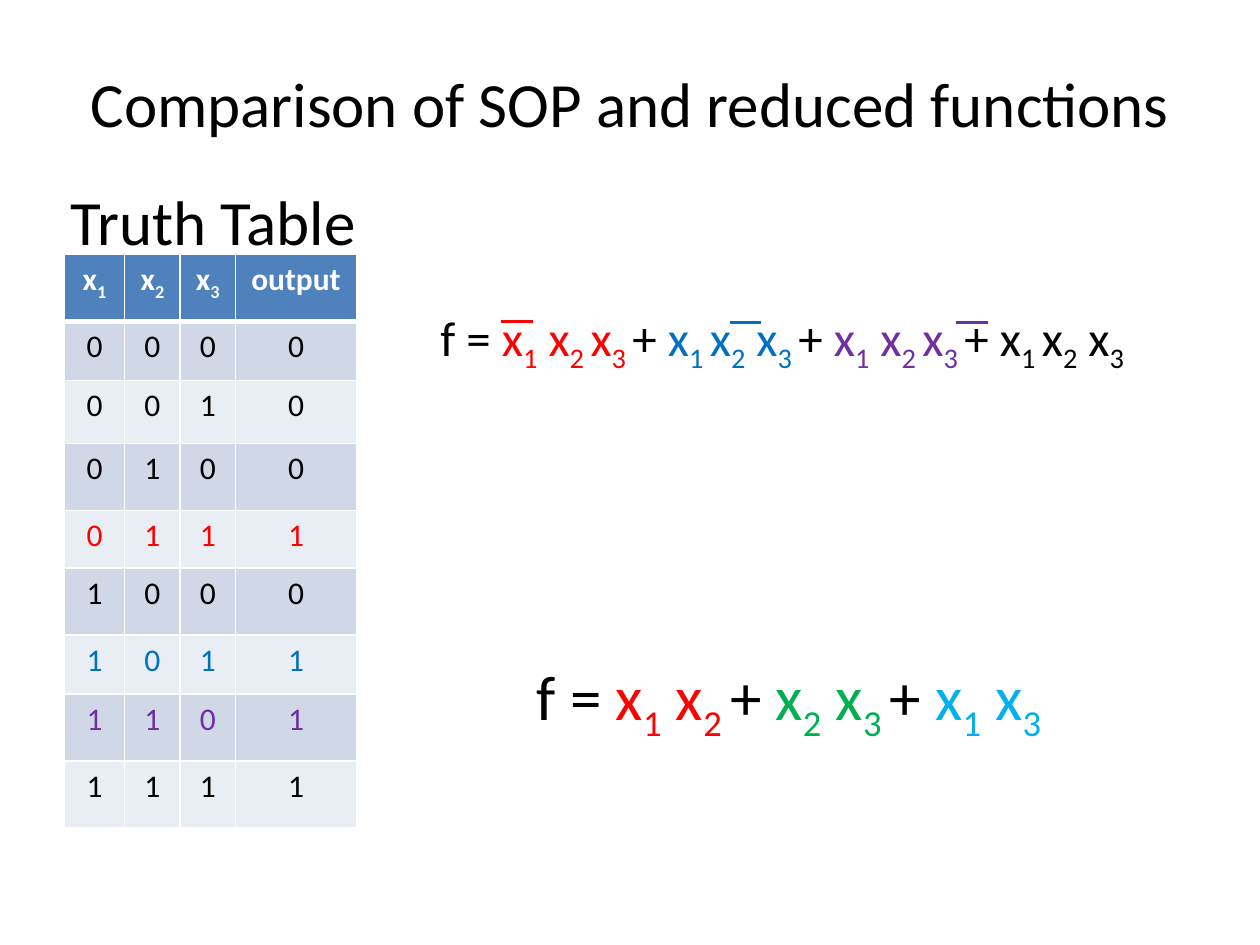
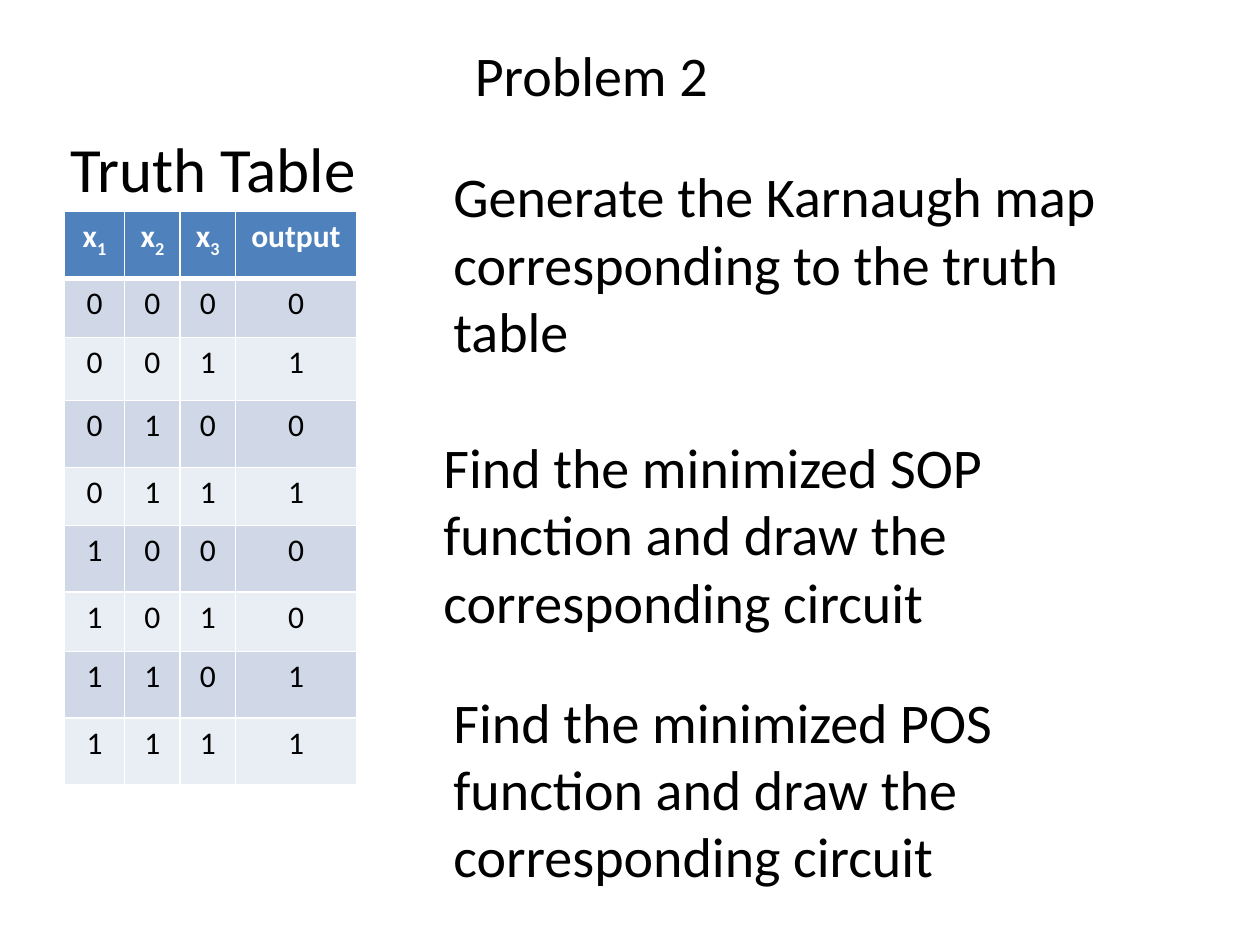
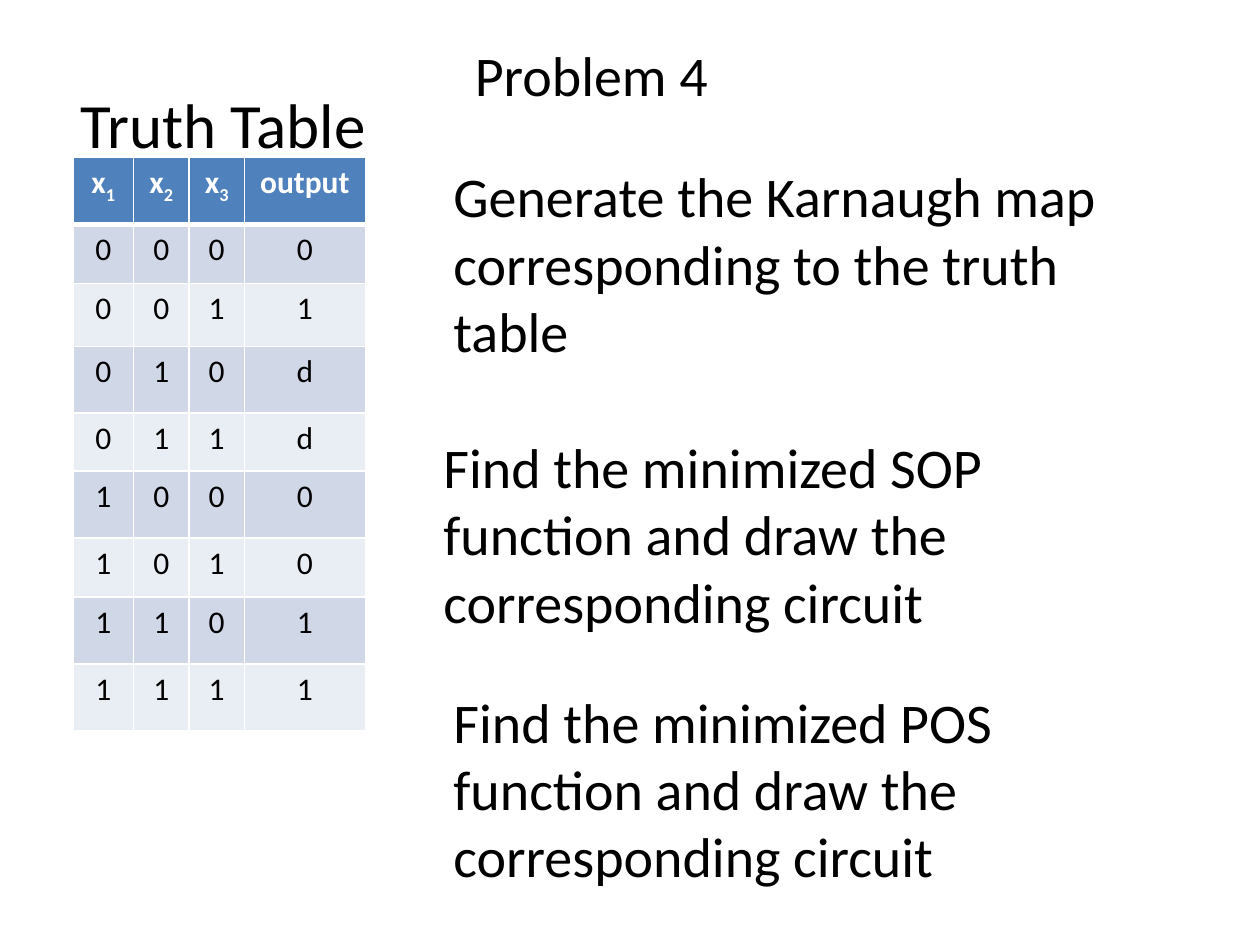
from itertools import product

from lxml import etree
from pptx import Presentation, util as u
from pptx.dml.color import RGBColor
from pptx.enum import shapes, text
from pptx.oxml import ns

COLOURS = {
    "black": "000000", "white": "FFFFFF", "red": "FF0000", "blue": "0070C0",
    "purple": "7030A0", "green": "00B050", "sky": "00B0F0",
    "header": "4F81BD", "odd row": "D0D8E8", "even row": "E9EDF4",
}
FONT = "Calibri"

deck = Presentation()
deck.slide_width, deck.slide_height = u.Inches(10), u.Inches(7.5)
COLUMN = deck.slide_width // 20
ROW = deck.slide_height // 15


def write(frame, pieces, size, align=text.PP_ALIGN.LEFT, bold=False):
    """Fill a frame with (words, colour) pieces; underscores switch subscript on and off."""
    paragraph = frame.paragraphs[0]
    paragraph.alignment = align
    for words, colour in pieces:
        for index, part in enumerate(words.split("_")):
            if not part:
                continue
            run = paragraph.add_run()
            run.text = part
            formats = {"name": FONT, "size": u.Pt(size), "bold": bold}
            for key, value in formats.items():
                setattr(run.font, key, value)
            run.font.color.rgb = RGBColor.from_string(COLOURS[colour])
            if index % 2:
                run.font._element.set("baseline", "-25000")


def add_text(slide, place, pieces, size, anchor=text.MSO_ANCHOR.MIDDLE, align=text.PP_ALIGN.LEFT):
    """Add a text box at (column, row, columns, rows)."""
    left, top, width, height = place
    frame = slide.shapes.add_textbox(
        int(left * COLUMN), int(top * ROW), int(width * COLUMN), int(height * ROW)
    ).text_frame
    frame.word_wrap = True
    frame.vertical_anchor = anchor
    write(frame, pieces, size, align)


# Truth tables: heading place, table corner, outputs, coloured rows
truth_tables = [
    ((0.7, 2.8), (1.02, 4.04), "00010111", {4: "red", 6: "blue", 7: "purple"}),
    ((0.7, 1.96), (1.02, 3.36), "01010011", {}),
    ((0.86, 1.26), (1.16, 2.5), "01dd0011", {}),
]
column_widths = [0.96, 0.88, 0.88, 1.92]
row_heights = [1.06, 0.94, 1, 1.06, 0.92, 1.06, 0.94, 1.06, 1.06]
headings = ["x_1", "x_2", "x_3", "output"]

slides = []
for heading_place, corner, outputs, row_colours in truth_tables:
    slide = deck.slides.add_slide(deck.slide_layouts[6])
    slides.append(slide)
    add_text(slide, (*heading_place, 5.26, 1.42), [(" Truth Table", "black")], 36,
             text.MSO_ANCHOR.TOP)

    inputs = product("01", repeat=3)
    rows = [headings] + [[*bits, output] for bits, output in zip(inputs, outputs)]
    truth = slide.shapes.add_table(
        len(rows), len(headings), int(corner[0] * COLUMN), int(corner[1] * ROW),
        int(sum(column_widths) * COLUMN), int(sum(row_heights) * ROW)).table
    for column, width in zip(truth.columns, column_widths):
        column.width = int(width * COLUMN)
    for r, values in enumerate(rows):
        truth.rows[r].height = int(row_heights[r] * ROW)
        fill = "header" if r == 0 else "odd row" if r % 2 else "even row"
        ink = "white" if r == 0 else row_colours.get(r, "black")
        borders = {"lnL": 1, "lnR": 1, "lnT": 3 if r == 1 else 1, "lnB": 3 if r == 0 else 1}
        for c, value in enumerate(values):
            cell = truth.cell(r, c)
            properties = cell._tc.get_or_add_tcPr()
            for side, points in borders.items():
                line = etree.SubElement(properties, ns.qn(f"a:{side}"), w=str(u.Pt(points)))
                solid = etree.SubElement(line, ns.qn("a:solidFill"))
                etree.SubElement(solid, ns.qn("a:srgbClr"), val=COLOURS["white"])
            cell.fill.solid()
            cell.fill.fore_color.rgb = RGBColor.from_string(COLOURS[fill])
            write(cell.text_frame, [(value, ink)], 18, text.PP_ALIGN.CENTER, r == 0)

# Comparison slide
comparison = slides[0]
add_text(comparison, (1, 0.6, 18, 2.04), [("Comparison of SOP and reduced functions", "black")],
         36, align=text.PP_ALIGN.CENTER)
reduced_function = [
    (" f = ", "black"), ("x_1_ x_2 _", "red"), ("+ ", "black"),
    ("x_2_ x_3 _", "green"), ("+ ", "black"), ("x_1_ x_3", "sky"),
]
add_text(comparison, (8.1, 10.34, 9.4, 1.42), reduced_function, 36, text.MSO_ANCHOR.TOP)
sop_function = [
    (" f = ", "black"), ("x_1_ x_2 _x_3 _", "red"), ("+ ", "black"),
    ("x_1 _x_2_ x_3 _", "blue"), ("+ ", "black"),
    ("x_1_ x_2 _x_3 _", "purple"), ("+ x_1 _x_2_ x_3", "black"),
]
add_text(comparison, (6.62, 4.78, 12.36, 1.14), sop_function, 28, text.MSO_ANCHOR.TOP)

negation_bars = [(7.96, 5.1, "red"), (11.58, 5.12, "blue"), (15.18, 5.12, "purple")]
for left, level, colour in negation_bars:
    bar = comparison.shapes.add_connector(
        shapes.MSO_CONNECTOR.STRAIGHT, int(left * COLUMN), int(level * ROW),
        int((left + 0.5) * COLUMN), int(level * ROW))
    bar.line.color.rgb = RGBColor.from_string(COLOURS[colour])
    bar.line.width = u.Pt(1.75)
    etree.SubElement(bar._element.spPr, ns.qn("a:effectLst"))

# Problem slides
tasks = [
    (7, 2.5, "Generate the Karnaugh map corresponding to the truth table"),
    (6.84, 6.8, "Find the minimized SOP function and draw the corresponding circuit"),
    (7, 10.84, "Find the minimized POS function and draw the corresponding circuit"),
]
for slide, problem in zip(slides[1:], ["Problem 2", "Problem 4"]):
    add_text(slide, (7.34, 0.3, 4.76, 1.74), [(problem, "black")], 32)
    for left, top, task in tasks:
        add_text(slide, (left, top, 11.84, 3.34), [(task, "black")], 32)

deck.save("out.pptx")
